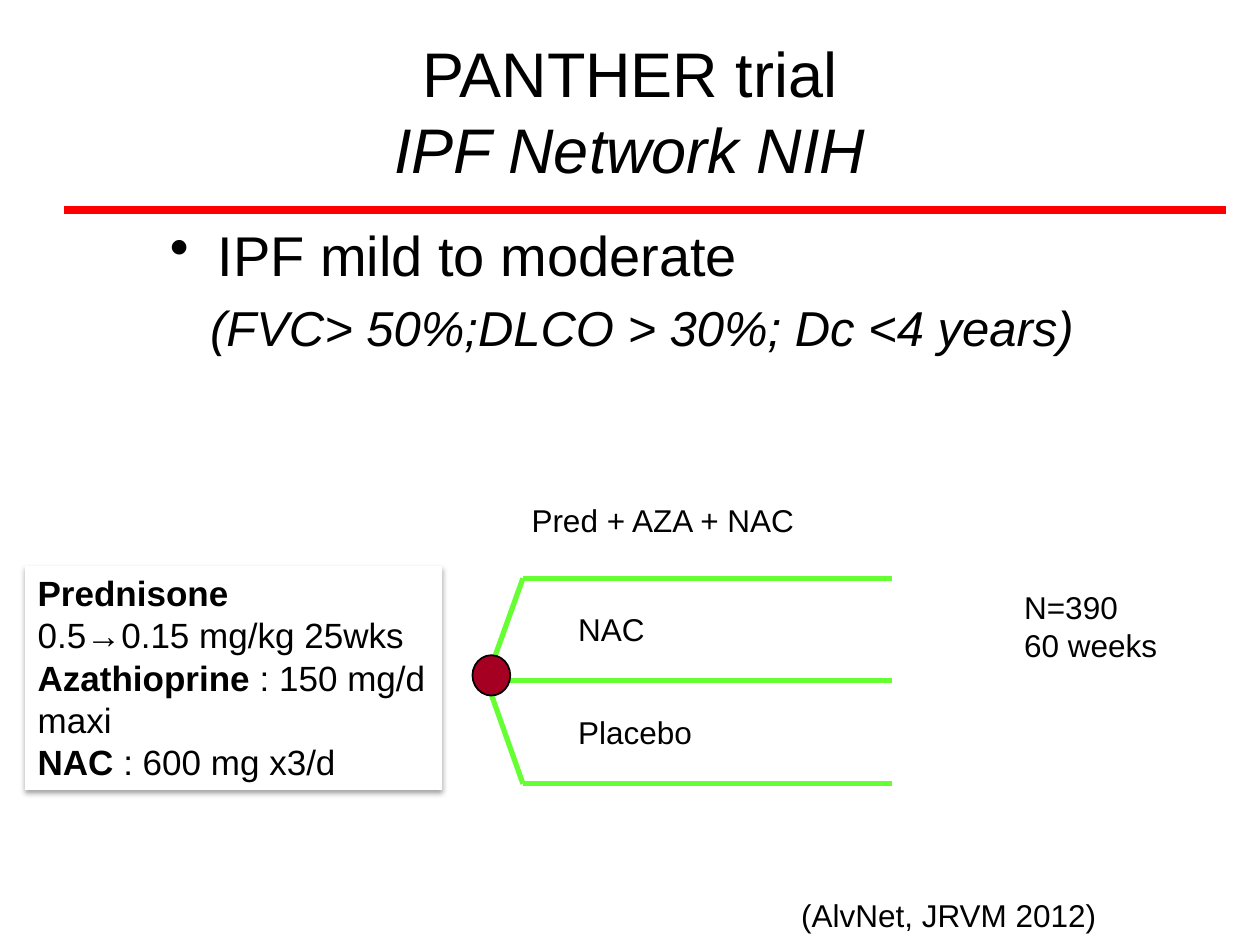
from dataclasses import dataclass

from lxml.etree import SubElement
from pptx import Presentation
from pptx.dml.color import RGBColor
from pptx.enum.shapes import MSO_CONNECTOR as Connector, MSO_SHAPE as Preset
from pptx.enum.text import MSO_ANCHOR as Anchor, PP_ALIGN as Align
from pptx.oxml.ns import qn
from pptx.shapes.base import BaseShape
from pptx.slide import Slide
from pptx.util import Emu, Pt

EMU_PER_PX = 9144


@dataclass(frozen=True)
class Theme:
    font: str = "Arial"
    ink: str = "000000"
    paper: str = "FFFFFF"
    rule: str = "FF0000"
    branch: str = "66FF33"
    node: str = "A50021"
    title: int = 36
    body: int = 32
    criteria: int = 28
    dose: int = 20
    label: int = 18


@dataclass(frozen=True)
class Box:
    left: int
    top: int
    width: int
    height: int


@dataclass(frozen=True)
class Run:
    text: str
    bold: bool = False
    italic: bool = False


@dataclass(frozen=True)
class Line:
    runs: tuple[Run, ...]
    size: int
    align: Align = Align.LEFT
    before: float = 0
    margin: int = 0
    bullet: str = ""


@dataclass(frozen=True)
class Label:
    box: Box
    texts: tuple[str, ...]


THEME = Theme()


def px(length: int) -> Emu:
    """Turn pixels into EMU."""
    return Emu(length * EMU_PER_PX)


def place(box: Box) -> tuple[Emu, Emu, Emu, Emu]:
    """Give a box as EMU arguments."""
    return px(box.left), px(box.top), px(box.width), px(box.height)


def write(shape: BaseShape, lines: list[Line], anchor: Anchor = Anchor.TOP) -> None:
    """Fill a shape with styled lines."""
    frame = shape.text_frame
    frame.word_wrap = True
    frame.vertical_anchor = anchor
    for index, line in enumerate(lines):
        paragraph = frame.add_paragraph() if index else frame.paragraphs[0]
        paragraph.alignment = line.align
        paragraph.space_before = Pt(line.before)
        if line.margin:
            properties = paragraph._p.get_or_add_pPr()
            properties.set("marL", str(px(line.margin)))
            properties.set("indent", str(-px(line.margin) if line.bullet else 0))
            if line.bullet:
                SubElement(properties, qn("a:buChar"), char=line.bullet)
        for item in line.runs:
            run = paragraph.add_run()
            run.text = item.text
            run.font.name = THEME.font
            run.font.size = Pt(line.size)
            run.font.bold = item.bold
            run.font.italic = item.italic
            run.font.color.rgb = RGBColor.from_string(THEME.ink)


def add_text(slide: Slide, box: Box, lines: list[Line], anchor: Anchor = Anchor.TOP) -> None:
    """Add a text box."""
    write(slide.shapes.add_textbox(*place(box)), lines, anchor)


def add_line(slide: Slide, start: tuple[int, int], end: tuple[int, int], color: str, width: float) -> None:
    """Add a straight line without a shadow."""
    line = slide.shapes.add_connector(Connector.STRAIGHT, *map(px, start + end))
    line.line.color.rgb = RGBColor.from_string(color)
    line.line.width = Pt(width)
    SubElement(line._element.spPr, qn("a:effectLst"))


def add_preset(slide: Slide, preset: Preset, box: Box, fill: str) -> BaseShape:
    """Add a filled shape without outline or shadow."""
    shape = slide.shapes.add_shape(preset, *place(box))
    shape.shadow.inherit = False
    shape.fill.solid()
    shape.fill.fore_color.rgb = RGBColor.from_string(fill)
    shape.line.fill.background()
    return shape


def add_shadow(shape: BaseShape) -> None:
    """Cast a soft shadow straight down."""
    effects = shape._element.spPr.find(qn("a:effectLst"))
    shadow = SubElement(effects, qn("a:outerShdw"), blurRad=str(Pt(3.1)), dist=str(Pt(1.8)),
                        dir="5400000", rotWithShape="0")
    color = SubElement(shadow, qn("a:srgbClr"), val=THEME.ink)
    SubElement(color, qn("a:alpha"), val="35000")


def add_header(slide: Slide) -> None:
    """Add the title, its rule and the inclusion criteria."""
    add_text(slide, Box(75, 25, 850, 125), [
        Line((Run("PANTHER trial"),), THEME.title, Align.CENTER),
        Line((Run("IPF Network NIH", italic=True),), THEME.title, Align.CENTER),
    ], Anchor.MIDDLE)
    add_text(slide, Box(125, 170, 850, 450), [
        Line((Run("IPF mild to moderate"),), THEME.body, before=48, margin=38, bullet="•"),
        Line((Run("(FVC> 50%;DLCO > 30%; Dc <4 years)", italic=True),), THEME.criteria, before=5.6, margin=32),
    ])
    add_line(slide, (51, 167), (973, 167), THEME.rule, 4.5)


def add_arms(slide: Slide) -> None:
    """Add the three trial arms and their starting node."""
    origin, fork, end = (386, 540), 415, 708
    for level in (459, 540, 622):
        add_line(slide, (fork, level), (end, level), THEME.branch, 3)
        add_line(slide, origin, (fork, level), THEME.branch, 3)
    node = add_preset(slide, Preset.OVAL, Box(375, 520, 30, 32), THEME.node)
    node.line.color.rgb = RGBColor.from_string(THEME.ink)
    node.line.width = Pt(1)


def add_labels(slide: Slide) -> None:
    """Add the arm names, trial size and citation."""
    labels = (
        Label(Box(412, 393, 301, 51), ("Pred + AZA + NAC",)),
        Label(Box(449, 479, 91, 51), ("NAC",)),
        Label(Box(449, 561, 142, 51), ("Placebo",)),
        Label(Box(803, 462, 162, 91), ("N=390", "60 weeks")),
        Label(Box(626, 706, 265, 41), ("(AlvNet, JRVM 2012)",)),
    )
    for label in labels:
        add_text(slide, label.box, [Line((Run(text),), THEME.label) for text in label.texts])


def add_doses(slide: Slide) -> None:
    """Add the dosing card."""
    card = add_preset(slide, Preset.RECTANGLE, Box(20, 449, 331, 178), THEME.paper)
    add_shadow(card)
    doses = (
        (Run("Prednisone", bold=True),),
        (Run("0.5→0.15 mg/kg 25wks"),),
        (Run("Azathioprine", bold=True), Run(" : 150 mg/d maxi")),
        (Run("NAC", bold=True), Run(" : 600 mg x3/d")),
    )
    write(card, [Line(runs, THEME.dose) for runs in doses])


def main() -> None:
    """Build and save the slide."""
    presentation = Presentation()
    presentation.slide_width, presentation.slide_height = px(1000), px(750)
    slide = presentation.slides.add_slide(presentation.slide_layouts[6])
    add_header(slide)
    add_arms(slide)
    add_labels(slide)
    add_doses(slide)
    presentation.save("out.pptx")


if __name__ == "__main__":
    main()
